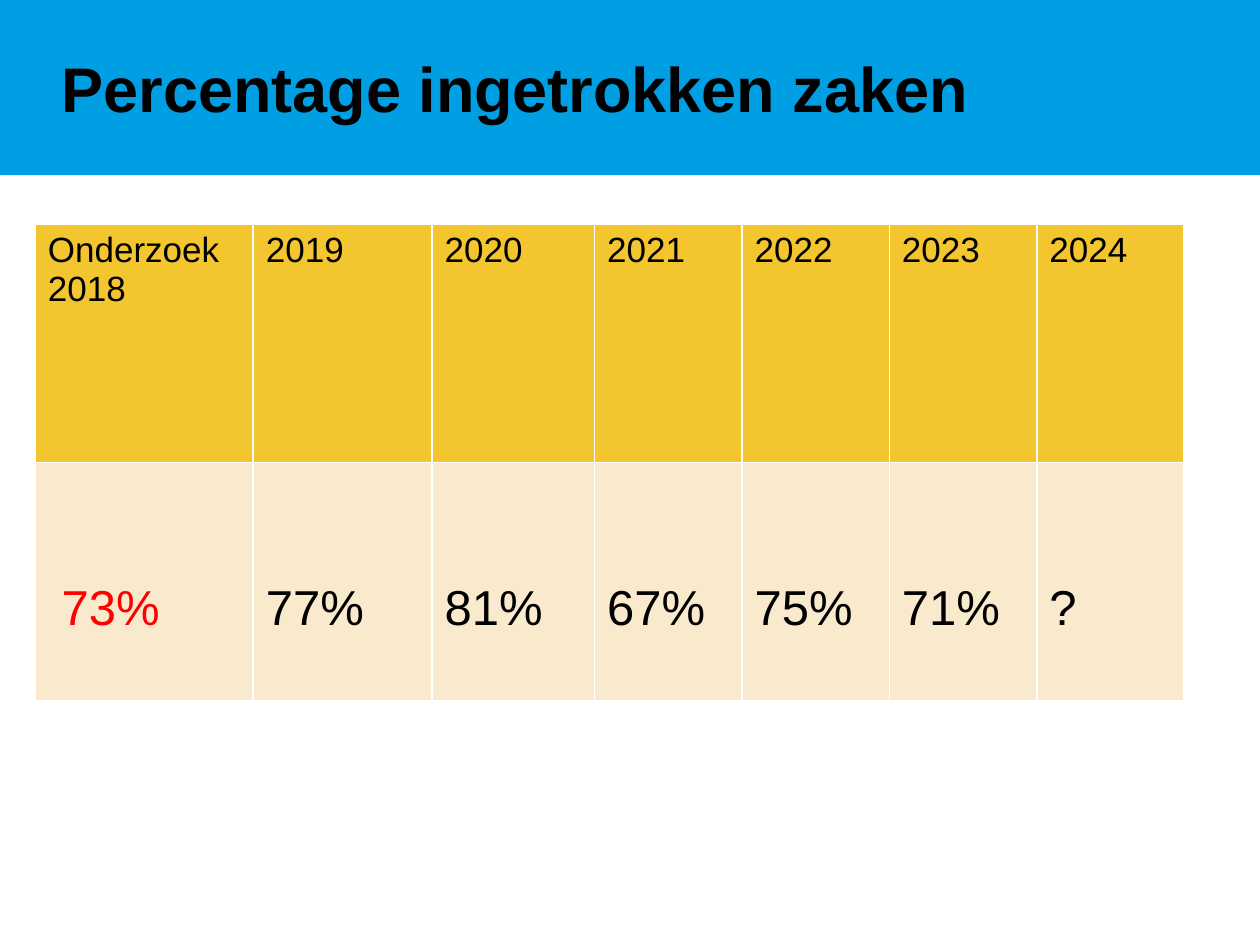
import pptx
import pptx.util
import pptx.dml.color
import pptx.enum.text
import pptx.oxml.ns
from lxml import etree

Inches = pptx.util.Inches
Pt = pptx.util.Pt
RGBColor = pptx.dml.color.RGBColor

BLUE = RGBColor(0x00, 0x9F, 0xE4)
GOLD = RGBColor(0xF3, 0xC5, 0x2F)
CREAM = RGBColor(0xFA, 0xEA, 0xCD)
RED = RGBColor(0xFF, 0x00, 0x00)
BLACK = RGBColor(0x00, 0x00, 0x00)
WHITE = RGBColor(0xFF, 0xFF, 0xFF)

COLUMN_WIDTHS = [1.73, 1.42, 1.29] + [1.17] * 4
ROW_HEIGHT = 1.89
YEARS = ["Onderzoek\n2018", "2019", "2020", "2021", "2022", "2023", "2024"]
PERCENTAGES = ["73%", "77%", "81%", "67%", "75%", "71%", "?"]


def format_text(tf, size, color, bold=False):
    for p in tf.paragraphs:
        p.font.name = "Arial"
        p.font.size = Pt(size)
        p.font.bold = bold
        p.font.color.rgb = color


def add_title(prs, s, text):
    title = s.shapes.title
    title.left = title.top = 0
    title.width, title.height = prs.slide_width, Inches(1.39)
    title.fill.solid()
    title.fill.fore_color.rgb = BLUE
    tf = title.text_frame
    tf.text = text
    tf.word_wrap = True
    tf.auto_size = pptx.enum.text.MSO_AUTO_SIZE.NONE
    tf.vertical_anchor = pptx.enum.text.MSO_ANCHOR.MIDDLE
    tf.margin_left = Inches(0.49)
    tf.paragraphs[0].alignment = pptx.enum.text.PP_ALIGN.LEFT
    format_text(tf, 36, BLACK, bold=True)


def set_borders(cell, color, width):
    tc_pr = cell._tc.get_or_add_tcPr()
    qn = pptx.oxml.ns.qn
    for side in ("a:lnL", "a:lnR", "a:lnT", "a:lnB"):
        line = etree.SubElement(tc_pr, qn(side), w=str(Pt(width)))
        fill = etree.SubElement(line, qn("a:solidFill"))
        etree.SubElement(fill, qn("a:srgbClr"), val=str(color))


def fill_row(row, texts, size, background, margin_top=0.05):
    row.height = Inches(ROW_HEIGHT)
    for cell, text in zip(row.cells, texts):
        set_borders(cell, WHITE, 1)
        cell.fill.solid()
        cell.fill.fore_color.rgb = background
        cell.margin_top = Inches(margin_top)
        cell.text = text
        format_text(cell.text_frame, size, BLACK)


def add_percentage_table(s):
    frame = s.shapes.add_table(
        2, len(COLUMN_WIDTHS), Inches(0.28), Inches(1.78),
        Inches(sum(COLUMN_WIDTHS)), Inches(2 * ROW_HEIGHT))
    table = frame.table
    for column, width in zip(table.columns, COLUMN_WIDTHS):
        column.width = Inches(width)
    fill_row(table.rows[0], YEARS, 20, GOLD)
    fill_row(table.rows[1], PERCENTAGES, 28, CREAM, margin_top=0.94)
    baseline = table.cell(1, 0)
    baseline.margin_left = Inches(0.21)
    format_text(baseline.text_frame, 28, RED)


def main():
    prs = pptx.Presentation()
    prs.slide_width, prs.slide_height = Inches(10), Inches(7.5)
    s = prs.slides.add_slide(prs.slide_layouts[5])
    add_title(prs, s, "Percentage ingetrokken zaken")
    add_percentage_table(s)
    prs.save("out.pptx")


if __name__ == "__main__":
    main()
